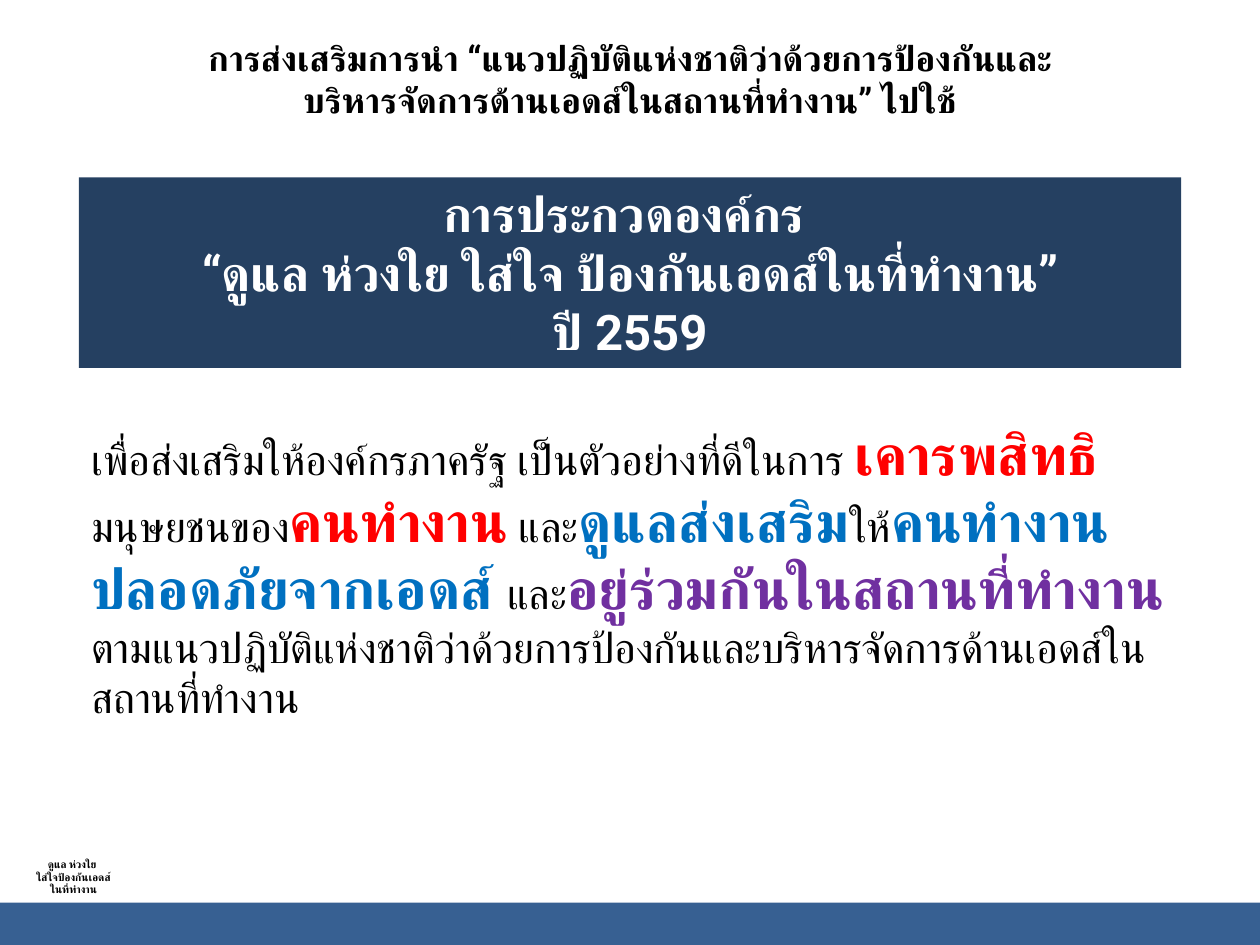
from dataclasses import dataclass

import pptx
import pptx.dml.color
import pptx.enum.lang
import pptx.enum.shapes
import pptx.enum.text
import pptx.oxml.ns
import pptx.util
from lxml import etree

Pt = pptx.util.Pt
ALIGN = pptx.enum.text.PP_ALIGN
ANCHOR = pptx.enum.text.MSO_ANCHOR

FONT = "Roboto"
COLORS = {
    "black": "000000",
    "white": "FFFFFF",
    "red": "FF0000",
    "blue": "0070C0",
    "purple": "7030A0",
    "navy": "254061",
    "footer": "376092",
}


@dataclass(frozen=True)
class Box:
    left: float
    top: float
    width: float
    height: float

    def lengths(self) -> tuple:
        return tuple(Pt(value) for value in (self.left, self.top, self.width, self.height))


@dataclass(frozen=True)
class Phrase:
    text: str
    color: str = "black"

    @property
    def stressed(self) -> bool:
        return self.color != "black"


OBJECTIVE = [
    Phrase("เพื่อส่งเสริมให้องค์กรภาครัฐ เป็นตัวอย่างที่ดีในการ "),
    Phrase("เคารพสิทธิ", "red"),
    Phrase("มนุษยชนของ"),
    Phrase("คนทำงาน", "red"),
    Phrase(" และ"),
    Phrase("ดูแลส่งเสริม", "blue"),
    Phrase("ให้"),
    Phrase("คนทำงานปลอดภัยจากเอดส์ ", "blue"),
    Phrase("และ"),
    Phrase("อยู่ร่วมกันในสถานที่ทำงาน ", "purple"),
    Phrase("ตามแนวปฏิบัติแห่งชาติว่าด้วยการป้องกันและบริหารจัดการด้านเอดส์ในสถานที่ทำงาน"),
]


def add_text(paragraph, text: str, *, size: float, color: str = "black", bold: bool = True) -> None:
    """Append a run whose font also applies to Thai (complex script) letters."""
    run = paragraph.add_run()
    run.text = text
    font = run.font
    font.name, font.size, font.bold = FONT, Pt(size), bold
    font.color.rgb = pptx.dml.color.RGBColor.from_string(COLORS[color])
    font.language_id = pptx.enum.lang.MSO_LANGUAGE_ID.THAI
    properties = run._r.get_or_add_rPr()
    etree.SubElement(properties, pptx.oxml.ns.qn("a:cs"), typeface=FONT)


def add_centered_lines(frame, lines: list[str], **text_format) -> None:
    for index, line in enumerate(lines):
        paragraph = frame.add_paragraph() if index else frame.paragraphs[0]
        paragraph.alignment = ALIGN.CENTER
        add_text(paragraph, line, **text_format)


def add_text_frame(slide, box: Box, anchor=ANCHOR.TOP):
    frame = slide.shapes.add_textbox(*box.lengths()).text_frame
    frame.word_wrap = True
    frame.vertical_anchor = anchor
    return frame


def add_band(slide, box: Box, color: str):
    shape = slide.shapes.add_shape(pptx.enum.shapes.MSO_SHAPE.RECTANGLE, *box.lengths())
    shape.shadow.inherit = False
    shape.fill.solid()
    shape.fill.fore_color.rgb = pptx.dml.color.RGBColor.from_string(COLORS[color])
    shape.line.fill.background()
    shape.text_frame.word_wrap = True
    shape.text_frame.vertical_anchor = ANCHOR.TOP
    return shape


def main() -> None:
    presentation = pptx.Presentation()
    presentation.slide_width, presentation.slide_height = Pt(720), Pt(540)
    slide = presentation.slides.add_slide(presentation.slide_layouts[6])

    title = add_text_frame(slide, Box(0, 0, 720, 90), ANCHOR.MIDDLE).paragraphs[0]
    title.alignment = ALIGN.CENTER
    add_text(title, "การส่งเสริมการนำ “แนวปฏิบัติแห่งชาติว่าด้วยการป้องกันและ", size=20)
    title.add_line_break()
    add_text(title, "บริหารจัดการด้านเอดส์ในสถานที่ทำงาน” ไปใช้", size=20)

    objective = add_text_frame(slide, Box(45, 230.4, 630, 191.5), ANCHOR.MIDDLE).paragraphs[0]
    for phrase in OBJECTIVE:
        add_text(objective, phrase.text, size=32 if phrase.stressed else 24,
                 color=phrase.color, bold=phrase.stressed)

    contest = add_band(slide, Box(45, 101.3, 630, 109), "navy")
    add_centered_lines(
        contest.text_frame,
        ["การประกวดองค์กร ", "“ดูแล ห่วงใย ใส่ใจ ป้องกันเอดส์ในที่ทำงาน”", "ปี 2559"],
        size=28, color="white",
    )

    add_band(slide, Box(0, 515.8, 720, 24.2), "footer")
    slogan = add_text_frame(slide, Box(-28, 486.7, 140, 28.8))
    add_centered_lines(slogan, ["ดูแล ห่วงใย ", "ใส่ใจป้องกันเอดส์", "ในที่ทำงาน"], size=6)

    presentation.save("out.pptx")


if __name__ == "__main__":
    main()
